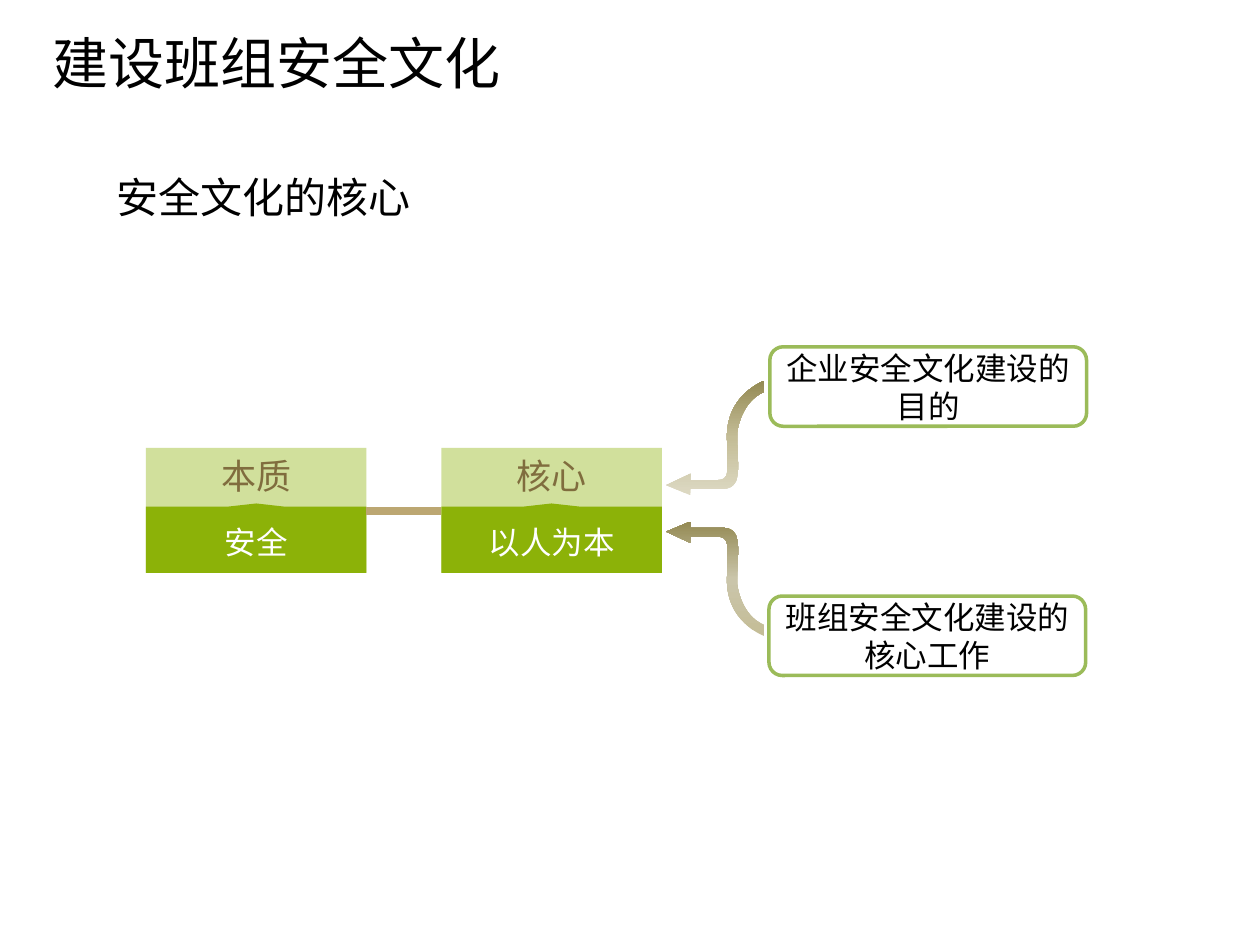
from lxml.etree import SubElement
from copy import deepcopy

from pptx import Presentation
from pptx.dml.color import RGBColor
from pptx.enum.shapes import MSO_CONNECTOR as Connector, MSO_SHAPE as Shape
from pptx.enum.text import MSO_ANCHOR as Anchor, PP_ALIGN as Align
from pptx.oxml.ns import qn
from pptx.util import Pt

CJK = "Noto Sans CJK SC"
LATIN = "Calibri"
GREEN = "8CB208"
CARD_TOP, CARD_WIDTH, CARD_HEIGHT = 256, 126, 71.3
MIRROR_SUM = 581  # the two arrows mirror each other: y + mirrored y

# Arrow outline: each step ends at its last point; three points make a curve
ARROW_STEPS = [
    [(437, 217.5)],
    [(437, 217.5), (414, 225.4), (415.5, 252)],
    [(415.5, 260.6), (415.5, 269.3), (415.5, 269.3)],
    [(415.5, 269.3), (416.2, 274.3), (410.4, 274.3)],
    [(402.5, 274.3), (394.6, 274.3), (394.6, 274.3)],
    [(394.6, 270.7)], [(380.7, 277.2)], [(394.6, 283)], [(394.6, 279.4)],
    [(394.6, 279.4), (403.9, 279.4), (413.3, 279.4)],
    [(420.5, 279.4), (421.2, 272.9), (421.2, 272.9)],
    [(422.6, 267.1), (421.2, 259.9), (421.2, 247.7)],
    [(424.1, 227.5), (437, 223.9), (437, 223.9)],
]


def color(hex_value):
    return RGBColor.from_string(hex_value)


def write(shape, text, size=18, font=CJK, ink="000000", align=Align.CENTER,
          anchor=Anchor.MIDDLE, spacing=None, left=7.2, right=7.2):
    frame = shape.text_frame
    frame.word_wrap = True
    frame.vertical_anchor = anchor
    frame.margin_left, frame.margin_right = Pt(left), Pt(right)
    frame.margin_top = frame.margin_bottom = Pt(3.6)
    paragraph = frame.paragraphs[0]
    paragraph.alignment = align
    if spacing:
        paragraph.line_spacing = spacing
    run = paragraph.add_run()
    run.text = text
    run.font.size = Pt(size)
    run.font.name = font
    run.font.color.rgb = color(ink)
    SubElement(run.font._element, qn("a:ea"), typeface=CJK)


def add_label(slide, box, text, **style):
    write(slide.shapes.add_textbox(*map(Pt, box)), text, **style)


def add_block(slide, kind, box, fill, outline=None, opacity=None):
    block = slide.shapes.add_shape(kind, *map(Pt, box))
    block.shadow.inherit = False
    block.fill.solid()
    block.fill.fore_color.rgb = color(fill)
    if opacity:
        tint = block._element.spPr.find(qn("a:solidFill"))[0]
        SubElement(tint, qn("a:alpha"), val=str(opacity * 1000))
    if outline:
        block.line.color.rgb = color(outline)
        block.line.width = Pt(2)
    else:
        block.line.fill.background()
    return block


def add_outline(slide, points):
    corners = [(Pt(x), Pt(y)) for x, y in points]
    builder = slide.shapes.build_freeform(*corners[0], scale=1.0)
    builder.add_line_segments(corners[1:], close=True)
    outline = builder.convert_to_shape()
    outline.shadow.inherit = False
    outline.line.fill.background()
    return outline


def add_card(slide, left, heading, body):
    add_block(slide, Shape.RECTANGLE,
              (left, CARD_TOP, CARD_WIDTH, CARD_HEIGHT), GREEN, opacity=40)
    # Lower panel with a shallow peak
    peak, shoulder, bottom = 287.7, 289.5, CARD_TOP + CARD_HEIGHT
    right, middle = left + CARD_WIDTH, left + CARD_WIDTH / 2
    panel = add_outline(slide, [
        (middle, peak), (middle + 16, shoulder), (right, shoulder),
        (right, bottom), (left, bottom), (left, shoulder),
        (middle - 16, shoulder)])
    panel.fill.solid()
    panel.fill.fore_color.rgb = color(GREEN)
    write(panel, body, ink="FFFFFF", spacing=1.2, left=11.5, right=11.5)
    add_label(slide, (left, CARD_TOP, CARD_WIDTH, 31.7), heading, size=20,
              ink="806D3E", anchor=Anchor.TOP)


def add_link(slide, start_x, end_x, y):
    link = slide.shapes.add_connector(
        Connector.STRAIGHT, *map(Pt, (start_x, y, end_x, y)))
    link.line.color.rgb = color("BCA772")
    link.line.width = Pt(4.5)
    SubElement(link._element.spPr, qn("a:effectLst"))


def add_curved_arrow(slide, shades, mirrored=False):
    steps = [[(x, MIRROR_SUM - y if mirrored else y) for x, y in step]
             for step in ARROW_STEPS]
    arrow = add_outline(slide, [step[-1] for step in steps])
    # Turn the three-point steps into Bezier curves
    lines = list(arrow._element.spPr.iter(qn("a:lnTo")))
    for line, step in zip(lines, steps[1:]):
        if len(step) == 3:
            line.tag = qn("a:cubicBezTo")
            line.remove(line[0])
            for x, y in step:
                SubElement(line, qn("a:pt"), x=str(Pt(x) - arrow.left),
                           y=str(Pt(y) - arrow.top))
    # Three shades from bottom to top
    arrow.fill.gradient()
    arrow.fill.gradient_angle = 90
    stop_list = arrow._element.spPr.find(qn("a:gradFill")).find(qn("a:gsLst"))
    stop_list.insert(1, deepcopy(stop_list[0]))
    for stop, shade, position in zip(arrow.fill.gradient_stops, shades, (0, 0.5, 1)):
        stop.color.rgb = color(shade)
        stop.position = position


def main():
    deck = Presentation()
    deck.slide_width, deck.slide_height = Pt(720), Pt(540)
    slide = deck.slides.add_slide(deck.slide_layouts[6])

    # Headings
    add_label(slide, (0, 0, 720, 70.6), "建设班组安全文化", size=32,
              align=Align.LEFT, left=30.2)
    add_label(slide, (59.4, 94.3, 646.6, 33.8), "安全文化的核心", size=24,
              font=LATIN, align=Align.LEFT, anchor=Anchor.TOP)

    # Cards and the link between them
    core_left, essence_left = 252.2, 83.4
    add_card(slide, core_left, "核心", "以人为本")
    add_card(slide, essence_left, "本质", "安全")
    add_link(slide, essence_left + CARD_WIDTH, core_left, 291.8)

    # Arrows from the goals to the core
    add_curved_arrow(slide, ("C4BD97", "CAC5AA", "948A54"), mirrored=True)
    add_curved_arrow(slide, ("DDD9C3", "C4BD97", "948A54"))

    # Goals
    for left, top, goal in ((439.9, 198.2, "企业安全文化建设的目的"),
                            (439.4, 340.6, "班组安全文化建设的核心工作")):
        box = add_block(slide, Shape.ROUNDED_RECTANGLE, (left, top, 181, 45.4),
                        "FFFFFF", outline="9BBB59")
        write(box, goal, font=LATIN)

    deck.save("out.pptx")


if __name__ == "__main__":
    main()
